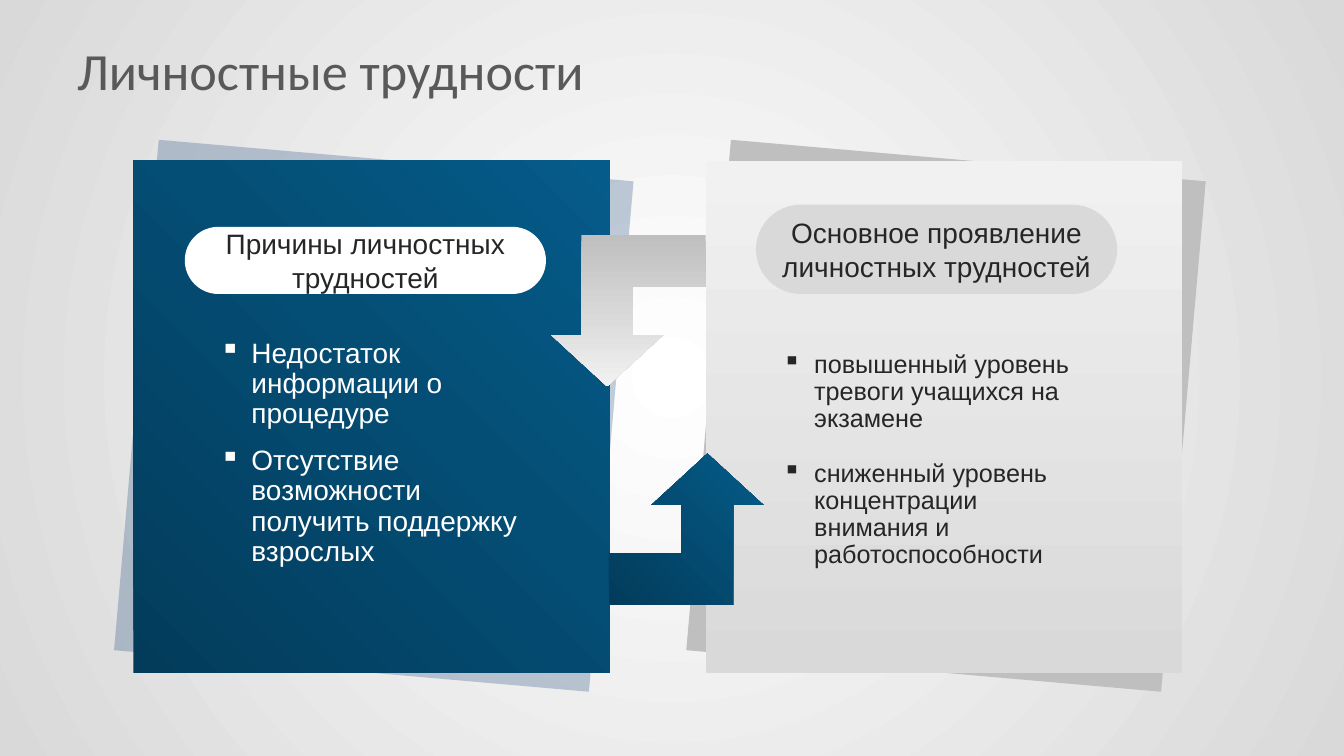
"""Builds the slide on personal difficulties: two cards linked by bent arrows."""
from pptx import Presentation
from pptx.dml.color import RGBColor
from pptx.enum.shapes import MSO_SHAPE
from pptx.enum.text import MSO_ANCHOR, PP_ALIGN
from pptx.oxml.ns import qn
from pptx.util import Pt
from lxml import etree

RECT, PILL, ARROW = MSO_SHAPE.RECTANGLE, MSO_SHAPE.ROUNDED_RECTANGLE, MSO_SHAPE.BENT_UP_ARROW
MIDDLE, TOP = MSO_ANCHOR.MIDDLE, MSO_ANCHOR.TOP
LEFT, CENTER = PP_ALIGN.LEFT, PP_ALIGN.CENTER
PX = 9525
THEME = {
    "heading": "Calibri", "body": "Arial",
    "title_size": 37.3, "pill_size": 20,
    "title": "595959", "ink": "262626", "white": "FFFFFF",
    "shade": "1F497D", "grey": "BFBFBF", "silver": "D9D9D9",
    "blue_fade": ("033C5B", "055B89"),
    "card_fade": ("D9D9D9", "F1F1F1"),
    "arrow_fade": ("BFBFBF", "F1F1F1"),
}


def add_block(kind, box, fill, angle=0, rotation=0):
    sp = s.shapes.add_shape(kind, *(v * PX for v in box))
    sp.shadow.inherit = False
    sp.line.fill.background()
    sp.rotation = rotation
    if isinstance(fill, tuple):
        sp.fill.gradient()
        sp.fill.gradient_angle = angle
        for stop, color in zip(sp.fill.gradient_stops, fill):
            stop.color.rgb = RGBColor.from_string(color)
    else:
        sp.fill.solid()
        sp.fill.fore_color.rgb = RGBColor.from_string(fill)
    return sp


def write(sp, lines, font, size, color, anchor, align):
    tf = sp.text_frame
    tf.word_wrap = True
    tf.vertical_anchor = anchor
    for i, line in enumerate(lines):
        p = tf.add_paragraph() if i else tf.paragraphs[0]
        p.alignment = align
        r = p.add_run()
        r.text = line
        r.font.name = font
        r.font.size = Pt(size)
        r.font.color.rgb = RGBColor.from_string(color)
    return tf.paragraphs


prs = Presentation()
prs.slide_width, prs.slide_height = 1280 * PX, 720 * PX
s = prs.slides.add_slide(prs.slide_layouts[6])

bg = s.background.fill
bg.gradient()
for stop, color in zip(bg.gradient_stops, (THEME["white"], THEME["silver"])):
    stop.color.rgb = RGBColor.from_string(color)
lin = s.background._cSld.find(".//" + qn("a:lin"))
grad = lin.getparent()
grad.remove(lin)
radial = etree.SubElement(grad, qn("a:path"), path="circle")
etree.SubElement(radial, qn("a:fillToRect"), l="50000", t="50000", r="50000", b="50000")

title = s.shapes.add_textbox(*(v * PX for v in (64, 29, 1152, 75)))
write(title, ["Личностные трудности"], THEME["heading"], THEME["title_size"],
      THEME["title"], MIDDLE, LEFT)

cards = [
    {"x": 127, "back": THEME["shade"], "alpha": 27, "front": THEME["blue_fade"], "angle": 45,
     "pill": (176, 216, 344, 64), "pill_fill": THEME["white"],
     "heading": "Причины личностных трудностей",
     "list": (200, 318, 328, 227), "size": 20, "color": THEME["white"],
     "before": 6, "after": 6,
     "items": ["Недостаток информации о процедуре",
               "Отсутствие возможности получить поддержку взрослых"]},
    {"x": 672, "back": THEME["grey"], "alpha": 100, "front": THEME["card_fade"], "angle": 90,
     "pill": (720, 195, 344, 85), "pill_fill": THEME["silver"],
     "heading": "Основное проявление личностных трудностей",
     "list": (736, 330, 312, 217), "size": 18, "color": THEME["ink"],
     "before": 0, "after": 19.5,
     "items": ["повышенный уровень тревоги учащихся на экзамене",
               "сниженный уровень концентрации внимания и работоспособности"]},
]
for card in cards:
    back = add_block(RECT, (card["x"] + 2, 152, 454, 488), card["back"], rotation=5)
    tint = back._element.spPr.find(qn("a:solidFill"))[0]
    etree.SubElement(tint, qn("a:alpha"), val=str(card["alpha"] * 1000))
    add_block(RECT, (card["x"], 153, 454, 488), card["front"], card["angle"])

    box = s.shapes.add_textbox(*(v * PX for v in card["list"]))
    for p in write(box, card["items"], THEME["body"], card["size"], card["color"], TOP, LEFT):
        p.level = 1
        p.line_spacing = 0.9
        p.space_before, p.space_after = Pt(card["before"]), Pt(card["after"])
        pPr = p._p.get_or_add_pPr()
        pPr.set("marL", str(30 * PX))
        pPr.set("indent", str(-30 * PX))
        bullet_color = etree.SubElement(pPr, qn("a:buClr"))
        etree.SubElement(bullet_color, qn("a:srgbClr"), val=card["color"])
        etree.SubElement(pPr, qn("a:buChar"), char="▪")

    pill = add_block(PILL, card["pill"], card["pill_fill"])
    pill.adjustments[0] = 0.5
    write(pill, [card["heading"]], THEME["body"], THEME["pill_size"], THEME["ink"],
          MIDDLE, CENTER)

for x, y, fade, angle, rotation in ((580, 432, THEME["blue_fade"], 45, 0),
                                    (525, 224, THEME["arrow_fade"], 90, 180)):
    arrow = add_block(ARROW, (x, y, 147, 144), fade, angle, rotation)
    for i, value in enumerate((0.34, 0.37, 0.34)):
        arrow.adjustments[i] = value

prs.save("out.pptx")
